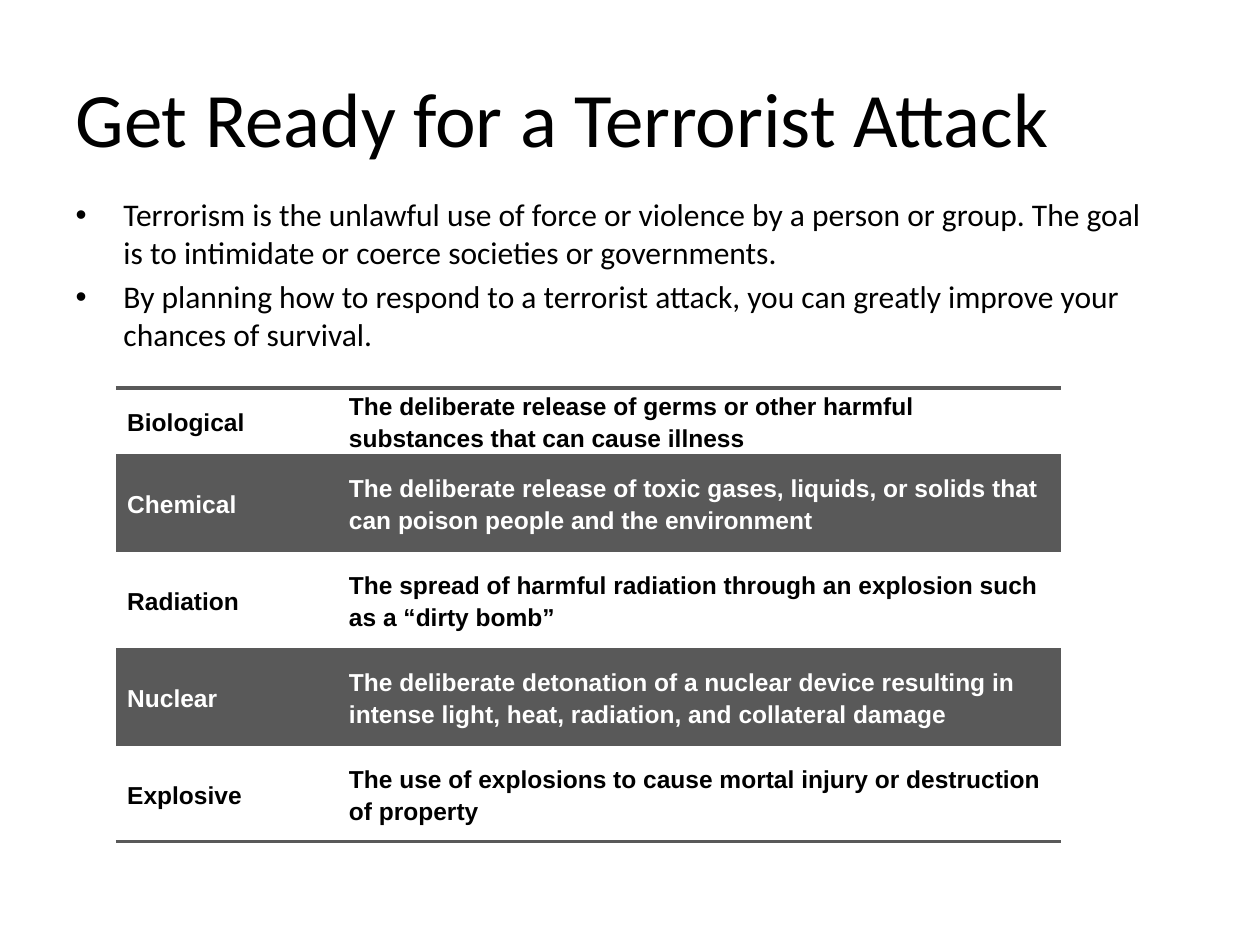
import pptx
import pptx.chart
import pptx.dml.color
import pptx.enum.text
import pptx.oxml
import pptx.oxml.ns
import pptx.util
from pptx.dml.color import RGBColor
from pptx.util import Inches

# Content
TITLE = "Get Ready for a Terrorist Attack"
POINTS = [
    "Terrorism is the unlawful use of force or violence by a person or group. "
    "The goal is to intimidate or coerce societies or governments.",
    "By planning how to respond to a terrorist attack, you can greatly "
    "improve your chances of survival.",
]
THREATS = [
    ("Biological", "The deliberate release of germs or other harmful "
                   "substances that can cause illness"),
    ("Chemical", "The deliberate release of toxic gases, liquids, or solids "
                 "that can poison people and the environment"),
    ("Radiation", "The spread of harmful radiation through an explosion such "
                  "as a “dirty bomb”"),
    ("Nuclear", "The deliberate detonation of a nuclear device resulting in "
                "intense light, heat, radiation, and collateral damage"),
    ("Explosive", "The use of explosions to cause mortal injury or "
                  "destruction of property"),
]
COLS = [1.76, 5.74]
ROWS = [0.52, 0.78, 0.76, 0.78, 0.76]

BLACK = RGBColor(0, 0, 0)
WHITE = RGBColor(255, 255, 255)
GRAY = RGBColor(0x59, 0x59, 0x59)
PLAIN = "{2D5ABB26-0587-4C30-8999-92F81FD0307C}"  # no style, no grid
MIDDLE = pptx.enum.text.MSO_ANCHOR.MIDDLE
LEFT = pptx.enum.text.PP_ALIGN.LEFT
NS = pptx.oxml.ns.nsdecls("a")


def place(shape, left, top, width, height):
    shape.left, shape.top = Inches(left), Inches(top)
    shape.width, shape.height = Inches(width), Inches(height)


def add_run(para, text, size, face, color, bold=False):
    run = para.add_run()
    run.text = text
    font = run.font
    font.size, font.name, font.bold = pptx.util.Pt(size), face, bold
    font.color.rgb = color


def add_bullet(para):
    props = para._p.get_or_add_pPr()
    props.set("marL", str(Inches(0.38)))
    props.set("indent", str(Inches(-0.38)))
    props.append(pptx.oxml.parse_xml(f'<a:buChar {NS} char="•"/>'))


def add_rule(cell, side):
    line = pptx.oxml.parse_xml(
        f'<a:{side} {NS} w="{pptx.util.Pt(2.25)}"><a:solidFill>'
        f'<a:srgbClr val="{GRAY}"/></a:solidFill></a:{side}>')
    cell._tc.get_or_add_tcPr().insert(0, line)


def fill_cell(cell, text, dark):
    cell.vertical_anchor = MIDDLE
    cell.margin_left = cell.margin_right = Inches(0.09)
    cell.margin_top = cell.margin_bottom = 0
    if dark:
        cell.fill.solid()
        cell.fill.fore_color.rgb = GRAY
    else:
        cell.fill.background()
    para = cell.text_frame.paragraphs[0]
    para.line_spacing = 1.15
    add_run(para, text, 14, "Arial", WHITE if dark else BLACK, True)


def main():
    deck = pptx.Presentation()
    deck.slide_width, deck.slide_height = Inches(10), Inches(7.5)
    slide = deck.slides.add_slide(deck.slide_layouts[1])

    # Title
    title = slide.shapes.title
    place(title, 0.5, 0.3, 9, 1.25)
    title.text_frame.vertical_anchor = MIDDLE
    para = title.text_frame.paragraphs[0]
    para.alignment = LEFT
    add_run(para, TITLE, 44, "Calibri", BLACK)

    # Bullet list
    body = slide.placeholders[1]
    place(body, 0.5, 1.5, 8.67, 4.95)
    frame = body.text_frame
    for i, text in enumerate(POINTS):
        para = frame.add_paragraph() if i else frame.paragraphs[0]
        add_bullet(para)
        para.space_before = pptx.util.Pt(3.6 if i else 0)
        add_run(para, text, 18, "Calibri", BLACK)

    # Threat table
    table = slide.shapes.add_table(
        len(ROWS), len(COLS), Inches(0.92), Inches(3.08),
        Inches(sum(COLS)), Inches(sum(ROWS))).table
    table.first_row = table.horz_banding = False
    table._tbl.tblPr.find(pptx.oxml.ns.qn("a:tableStyleId")).text = PLAIN
    for col, width in zip(table.columns, COLS):
        col.width = Inches(width)
    for r, (height, texts) in enumerate(zip(ROWS, THREATS)):
        table.rows[r].height = Inches(height)
        for c, text in enumerate(texts):
            fill_cell(table.cell(r, c), text, r % 2 == 1)

    # Rules above and below the table
    for c in range(len(COLS)):
        add_rule(table.cell(0, c), "lnT")
        add_rule(table.cell(len(ROWS) - 1, c), "lnB")

    deck.save("out.pptx")


if __name__ == "__main__":
    main()
